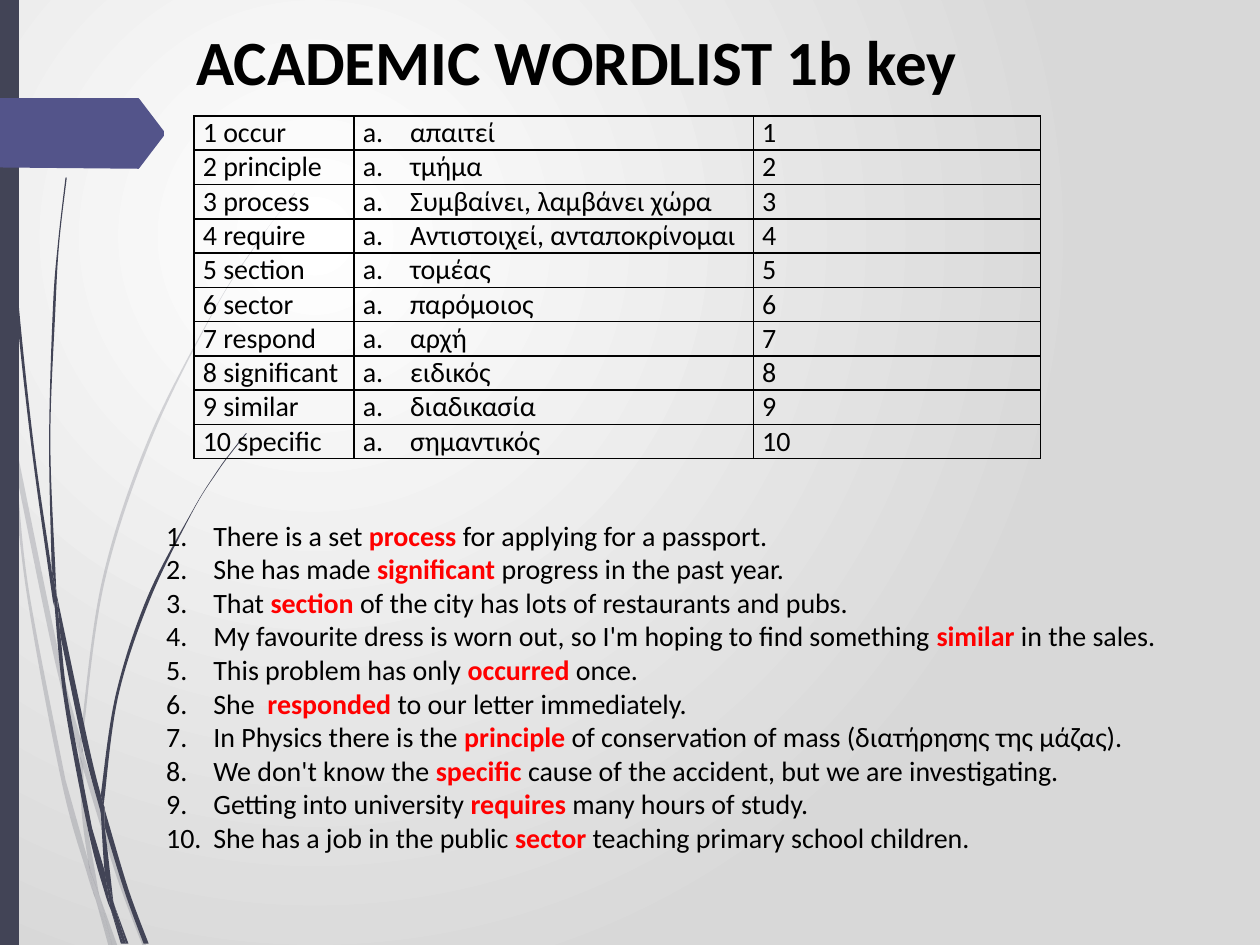
import pptx
import pptx.util
import pptx.dml.color
import pptx.enum.shapes
import pptx.enum.text
import pptx.oxml.ns
import lxml.etree

COLOURS = {"white": "FFFFFF", "grey": "D8D8D8", "slate": "424456",
           "violet": "53548A", "text": "000000", "answer": "FF0000"}
FONT = "Calibri"
WIDTH, HEIGHT = 10, 7.5

TITLE = "ACADEMIC WORDLIST 1b key"
WORDS = [
    ("occur", "απαιτεί"), ("principle", "τμήμα"),
    ("process", "Συμβαίνει, λαμβάνει χώρα"),
    ("require", "Αντιστοιχεί, ανταποκρίνομαι"),
    ("section", "τομέας"), ("sector", "παρόμοιος"), ("respond", "αρχή"),
    ("significant", "ειδικός"), ("similar", "διαδικασία"),
    ("specific", "σημαντικός"),
]
SENTENCES = [
    ("There is a set ", "process ", "for applying for a passport."),
    ("She has made ", "significant ", "progress in the past year."),
    ("That ", "section ", "of the city has lots of restaurants and pubs."),
    ("My favourite dress is worn out, so I'm hoping to find something ",
     "similar ", "in the sales."),
    ("This problem has only ", "occurred ", "once."),
    ("She ", " responded ", "to our letter immediately."),
    ("In Physics there is the ", "principle ",
     "of conservation of mass (διατήρησης της μάζας). "),
    ("We don't know the ", "specific ",
     "cause of the accident, but we are investigating."),
    ("Getting into university ", "requires ", "many hours of study."),
    ("She has a job in the public ", "sector ",
     "teaching primary school children."),
]
COLUMNS = (1.27, 3.17, 2.28)
TABLE_LEFT, TABLE_TOP, TABLE_HEIGHT = 1.54, 0.92, 2.67

PALE_WISPS = [
    [[(0.08, 3.5), (0.06, 3.22), (0, 2.82)], [(0, 2.99), (0.08, 3.44)]],
    [[(0.13, 3.76), (0.43, 5.22), (0.63, 5.99)],
     [(0.64, 5.86), (0.47, 5.2), (0.11, 3.45)]],
    [[(0.66, 6.1), (0.92, 6.94), (1.13, 7.5)],
     [(1.16, 7.5), (0.95, 6.92), (0.69, 6.07), (0.66, 5.96)]],
    [[(0.89, 7.5), (0.93, 7.5)], [(0.79, 7.11)]],
    [[(0.08, 3.5), (0.21, 4.7), (0.49, 6.21), (0.69, 6.93), (0.76, 7.14)],
     [(0.74, 7.07), (0.7, 6.83)],
     [(0.52, 6.19), (0.23, 4.69), (0.13, 3.76), (0.08, 3.5)]],
    [[(0.63, 5.99), (0.65, 6.46), (0.7, 6.83), (0.72, 6.92), (0.79, 7.11)],
     [(0.78, 7.06), (0.68, 6.46), (0.66, 6.1), (0.63, 5.99)]],
    [[(0.66, 5.96), (0.66, 5.84), (0.83, 4.62), (1.2, 3.49), (1.71, 2.45),
      (2.01, 1.98), (2.17, 1.75), (2.34, 1.54)],
     [(2.34, 1.53), (2.17, 1.75), (2.01, 1.97), (1.71, 2.44), (1.18, 3.48),
      (0.81, 4.61), (0.64, 5.84), (0.64, 5.86)]],
    [[(0.76, 7.14), (0.86, 7.5)], [(0.89, 7.5)]],
    [[(0.66, 6.1), (0.66, 5.96)], [(0.64, 5.86), (0.63, 5.99)]],
    [[(0.7, 6.83), (0.74, 7.07), (0.76, 7.14), (0.89, 7.5)],
     [(0.79, 7.11), (0.72, 6.92)]],
]
DARK_WISPS = [
    [[(0.03, 0), (0.03, 0.48), (0.06, 1.09), (0.14, 2.32), (0.27, 3.55),
      (0.41, 4.53), (0.43, 4.81)],
     [(0.42, 4.77), (0.25, 3.55), (0.12, 2.33), (0.05, 1.1), (0.03, 0.48),
      (0.02, 0)]],
    [[(0.48, 5.05), (0.66, 5.92), (0.8, 6.45)],
     [(0.8, 6.31), (0.7, 5.9), (0.45, 4.72)]],
    [[(0.83, 6.56), (0.99, 7.08), (1.14, 7.49)],
     [(1.18, 7.49), (1.02, 7.06), (0.85, 6.49), (0.83, 6.41)]],
    [[(0.43, 4.77), (0.51, 5.57), (0.7, 6.59), (0.83, 7.08), (0.88, 7.22)],
     [(0.87, 7.17), (0.83, 6.91)],
     [(0.73, 6.57), (0.54, 5.56), (0.48, 5.05), (0.43, 4.77)]],
    [[(0.45, 4.72), (0.44, 4.53), (0.4, 3.49), (0.44, 2.45), (0.47, 1.93),
      (0.53, 1.41)],
     [(0.52, 1.41), (0.46, 1.93), (0.42, 2.45), (0.39, 3.49), (0.41, 4.49)]],
    [[(1, 7.49), (1.02, 7.49)], [(0.91, 7.19)]],
    [[(0.41, 4.49), (0.43, 4.77), (0.48, 5.05)], [(0.45, 4.72)]],
    [[(0.83, 6.41), (0.83, 6.33), (0.94, 5.52), (1.19, 4.76), (1.53, 4.06),
      (1.73, 3.74), (1.84, 3.59), (1.96, 3.44)],
     [(1.95, 3.44), (1.84, 3.58), (1.73, 3.73), (1.53, 4.05), (1.17, 4.74),
      (0.92, 5.51), (0.8, 6.31)]],
    [[(0.88, 7.22), (0.96, 7.49)], [(0.98, 7.49)]],
    [[(0.8, 6.45), (0.83, 6.91), (0.87, 7.06), (0.91, 7.19)],
     [(0.9, 7.16), (0.83, 6.56), (0.8, 6.45)]],
    [[(0.8, 6.31), (0.8, 6.45), (0.83, 6.56)], [(0.83, 6.41)]],
    [[(0.83, 6.91), (0.87, 7.17), (0.88, 7.22), (0.98, 7.49)],
     [(1, 7.49), (0.91, 7.19), (0.87, 7.06)]],
]
TAG = [[(0, 0.78), (1.1, 0.78)], [(1.11, 0.79), (1.3, 1.04)],
       [(1.3, 1.08), (1.11, 1.33)], [(1.1, 1.34), (0, 1.33)]]

inch = pptx.util.Inches
tag = pptx.oxml.ns.qn


def colour(name):
    return pptx.dml.color.RGBColor.from_string(COLOURS[name])


def add_xml(parent, name, **attributes):
    return lxml.etree.SubElement(parent, tag(name), attributes)


def paint(shape, name, opacity=None):
    shape.shadow.inherit = False
    shape.fill.solid()
    shape.fill.fore_color.rgb = colour(name)
    shape.line.fill.background()
    if opacity:
        tint = shape.fill._xPr.find(".//" + tag("a:srgbClr"))
        add_xml(tint, "a:alpha", val=str(opacity * 1000))


def bend(segment, before, start, end, after):
    segment.tag = tag("a:cubicBezTo")
    for place, (near, low, high) in enumerate(((start, before, end),
                                               (end, after, start))):
        x, y = (round(n + (h - l) / 6) for n, l, h in zip(near, low, high))
        handle = lxml.etree.Element(tag("a:pt"), x=str(x), y=str(y))
        segment.insert(place, handle)


def add_outline(shapes, edges, name, opacity=None):
    edges = [[(inch(x), inch(y)) for x, y in edge] for edge in edges]
    points = sum(edges, [])
    builder = shapes.build_freeform(*points[0])
    builder.add_line_segments(points[1:], close=True)
    shape = builder.convert_to_shape()
    left, top = (min(values) for values in zip(*points))
    segments = list(shape._element.iter(tag("a:lnTo")))
    first = 0
    for edge in edges:
        local = [(x - left, y - top) for x, y in edge]
        padded = [local[0], *local, local[-1]]
        if len(edge) > 2:
            for step in range(len(edge) - 1):
                bend(segments[first + step], *padded[step:step + 4])
        first += len(edge)
    paint(shape, name, opacity)


def add_span(para, text, size=16, name="text", bold=False):
    span = para.add_run()
    span.text = text
    span.font.name, span.font.size, span.font.bold = FONT, pptx.util.Pt(size), bold
    span.font.color.rgb = colour(name)


def number(para, style, tab=None):
    properties = para._p.get_or_add_pPr()
    properties.set("marL", str(pptx.util.Pt(27)))
    properties.set("indent", str(-pptx.util.Pt(27)))
    add_xml(properties, "a:buFont", typeface="+mj-lt")
    add_xml(properties, "a:buAutoNum", type=style)
    if tab:
        stops = add_xml(properties, "a:tabLst")
        add_xml(stops, "a:tab", pos=str(inch(tab)), algn="l")


def border(cell):
    properties = cell._tc.get_or_add_tcPr()
    for side in "LRTB":
        line = add_xml(properties, f"a:ln{side}", w=str(pptx.util.Pt(1)))
        add_xml(add_xml(line, "a:solidFill"), "a:srgbClr", val=COLOURS["text"])


def add_word_table(page):
    table = page.shapes.add_table(
        len(WORDS), len(COLUMNS), inch(TABLE_LEFT), inch(TABLE_TOP),
        inch(sum(COLUMNS)), inch(TABLE_HEIGHT)).table
    table.first_row = table.horz_banding = False
    for column, width in zip(table.columns, COLUMNS):
        column.width = inch(width)
    for index, (word, meaning) in enumerate(WORDS):
        table.rows[index].height = 0
        texts = (f"{index + 1} {word}", meaning, str(index + 1))
        for position, text in enumerate(texts):
            cell = table.cell(index, position)
            border(cell)
            cell.fill.background()
            cell.margin_left = cell.margin_right = inch(0.07)
            cell.margin_top = cell.margin_bottom = 0
            para = cell.text_frame.paragraphs[0]
            para.alignment = pptx.enum.text.PP_ALIGN.JUSTIFY
            if position == 1:
                number(para, "alphaLcPeriod", 0.19)
            add_span(para, text)


def add_box(page, left, top, width, height, wrap):
    box = page.shapes.add_textbox(inch(left), inch(top), inch(width), inch(height))
    box.text_frame.word_wrap = wrap
    box.text_frame.auto_size = pptx.enum.text.MSO_AUTO_SIZE.SHAPE_TO_FIT_TEXT
    return box.text_frame


def main():
    deck = pptx.Presentation()
    deck.slide_width, deck.slide_height = inch(WIDTH), inch(HEIGHT)
    page = deck.slides.add_slide(deck.slide_layouts[6])
    backdrop = page.background.fill
    backdrop.gradient()
    for stop, name in zip(backdrop.gradient_stops, ("white", "grey")):
        stop.color.rgb = colour(name)
    gradient = page._element.find(".//" + tag("a:gradFill"))
    gradient.remove(gradient.find(tag("a:lin")))
    circle = add_xml(gradient, "a:path", path="circle")
    add_xml(circle, "a:fillToRect", l="50000", t="50000", r="100000", b="100000")
    for wisps, opacity in ((PALE_WISPS, 20), (DARK_WISPS, None)):
        group = page.shapes.add_group_shape()
        for wisp in wisps:
            add_outline(group.shapes, wisp, "slate", opacity)
    paint(page.shapes.add_shape(pptx.enum.shapes.MSO_SHAPE.RECTANGLE,
                                0, 0, inch(0.15), inch(HEIGHT)), "slate")
    add_outline(page.shapes, TAG, "violet")
    add_word_table(page)
    title = add_box(page, 1.46, 0.13, 6.3, 0.71, False)
    add_span(title.paragraphs[0], TITLE, 36, bold=True)
    exercise = add_box(page, 1.22, 4.05, 8.78, 2.79, True)
    exercise.vertical_anchor = pptx.enum.text.MSO_ANCHOR.MIDDLE
    for index, (before, answer, after) in enumerate(SENTENCES):
        para = exercise.add_paragraph() if index else exercise.paragraphs[0]
        para.alignment = pptx.enum.text.PP_ALIGN.JUSTIFY
        number(para, "arabicPeriod")
        add_span(para, before)
        add_span(para, answer, name="answer", bold=True)
        add_span(para, after)
    deck.save("out.pptx")


if __name__ == "__main__":
    main()
